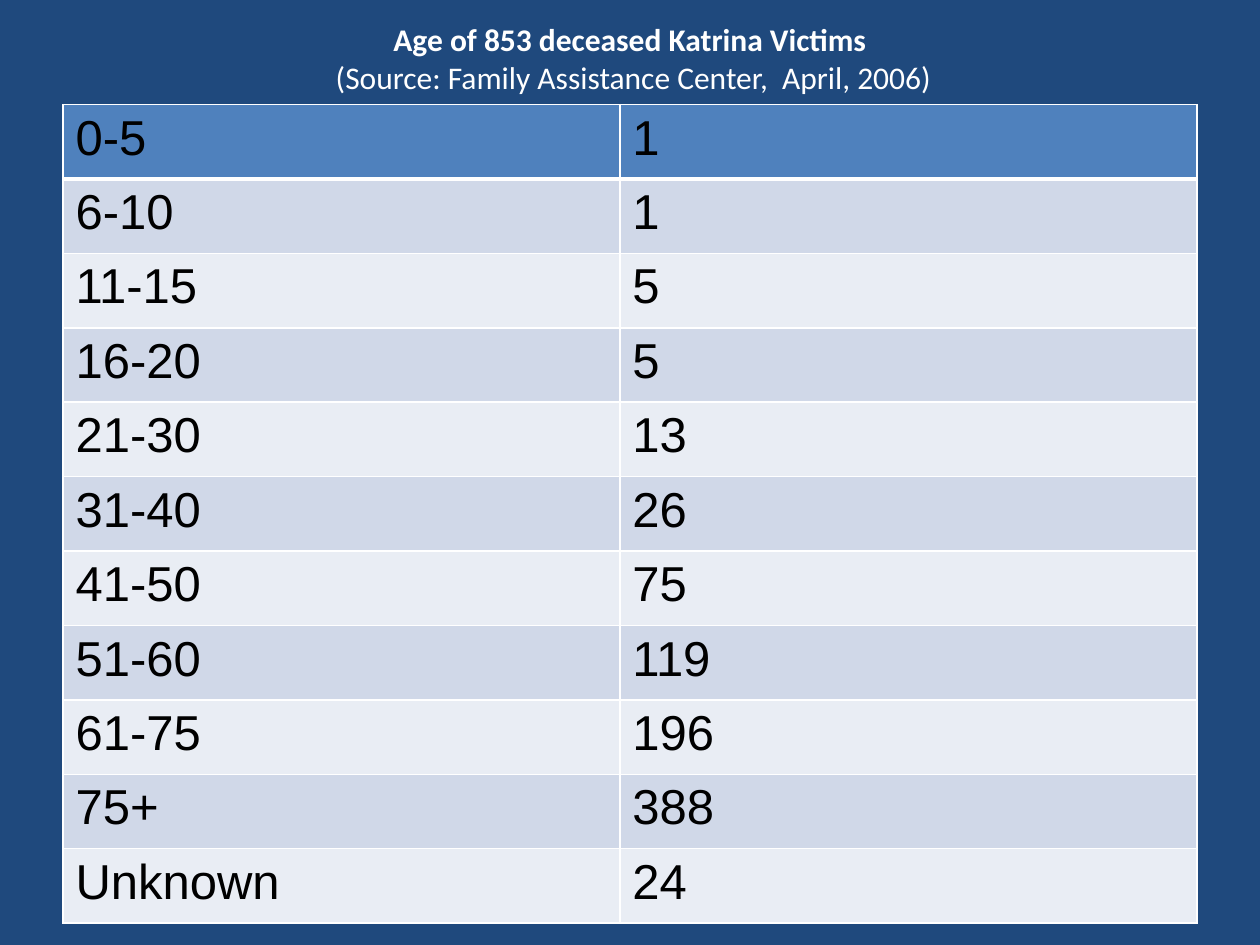
from typing import NamedTuple

from lxml.etree import SubElement
from pptx import Presentation
from pptx.dml.color import RGBColor
from pptx.enum.text import MSO_ANCHOR, PP_ALIGN
from pptx.oxml.ns import qn
from pptx.util import Inches, Pt

NAVY = RGBColor(0x1F, 0x49, 0x7D)
BLUE = RGBColor(0x4F, 0x81, 0xBD)
BAND_DARK = RGBColor(0xD0, 0xD8, 0xE8)
BAND_LIGHT = RGBColor(0xE9, 0xED, 0xF4)
WHITE = RGBColor(0xFF, 0xFF, 0xFF)
BLACK = RGBColor(0, 0, 0)


class AgeGroup(NamedTuple):
    ages: str
    victims: int


AGE_GROUPS = [
    AgeGroup("0-5", 1),
    AgeGroup("6-10", 1),
    AgeGroup("11-15", 5),
    AgeGroup("16-20", 5),
    AgeGroup("21-30", 13),
    AgeGroup("31-40", 26),
    AgeGroup("41-50", 75),
    AgeGroup("51-60", 119),
    AgeGroup("61-75", 196),
    AgeGroup("75+", 388),
    AgeGroup("Unknown", 24),
]
COLUMN_WIDTHS = (4.42, 4.58)
TABLE_HEIGHT = 6.5


def add_title(s) -> None:
    sp = s.shapes.title
    sp.left, sp.top, sp.width, sp.height = Inches(0.5), 0, Inches(9), Inches(0.92)
    tf = sp.text_frame
    tf.vertical_anchor = MSO_ANCHOR.MIDDLE
    p = tf.paragraphs[0]
    p.alignment = PP_ALIGN.CENTER
    r = p.add_run()
    r.text = "Age of 853 deceased Katrina Victims"
    style_title_run(r, True)
    p.add_line_break()
    r = p.add_run()
    r.text = " (Source: Family Assistance Center,  April, 2006)"
    style_title_run(r, False)


def style_title_run(r, bold: bool) -> None:
    r.font.name = "Calibri"
    r.font.size = Pt(18)
    r.font.bold = bold
    r.font.color.rgb = WHITE


def set_borders(cell, top: float, bottom: float) -> None:
    tc_pr = cell._tc.get_or_add_tcPr()
    widths = {"a:lnL": 1, "a:lnR": 1, "a:lnT": top, "a:lnB": bottom}
    for tag, width in widths.items():
        ln = SubElement(tc_pr, qn(tag), w=str(Pt(width)))
        fill = SubElement(ln, qn("a:solidFill"))
        SubElement(fill, qn("a:srgbClr"), val=str(WHITE))


def fill_cell(cell, text: str, row: int) -> None:
    set_borders(cell, top=3 if row == 1 else 1, bottom=3 if row == 0 else 1)
    cell.fill.solid()
    band = BAND_DARK if row % 2 else BAND_LIGHT
    cell.fill.fore_color.rgb = BLUE if row == 0 else band
    p = cell.text_frame.paragraphs[0]
    p.text = text
    p.font.name = "Arial"
    p.font.size = Pt(28)
    p.font.bold = False
    p.font.color.rgb = BLACK


def add_age_table(s, groups: list[AgeGroup]) -> None:
    table = s.shapes.add_table(
        len(groups), len(COLUMN_WIDTHS), Inches(0.5), Inches(0.83),
        Inches(sum(COLUMN_WIDTHS)), Inches(TABLE_HEIGHT),
    ).table
    for column, width in zip(table.columns, COLUMN_WIDTHS):
        column.width = Inches(width)
    for row, group in enumerate(groups):
        for col, value in enumerate(group):
            fill_cell(table.cell(row, col), str(value), row)


def main() -> None:
    prs = Presentation()
    prs.slide_width, prs.slide_height = Inches(10), Inches(7.5)
    s = prs.slides.add_slide(prs.slide_layouts[5])
    s.background.fill.solid()
    s.background.fill.fore_color.rgb = NAVY
    add_title(s)
    add_age_table(s, AGE_GROUPS)
    prs.save("out.pptx")


if __name__ == "__main__":
    main()
